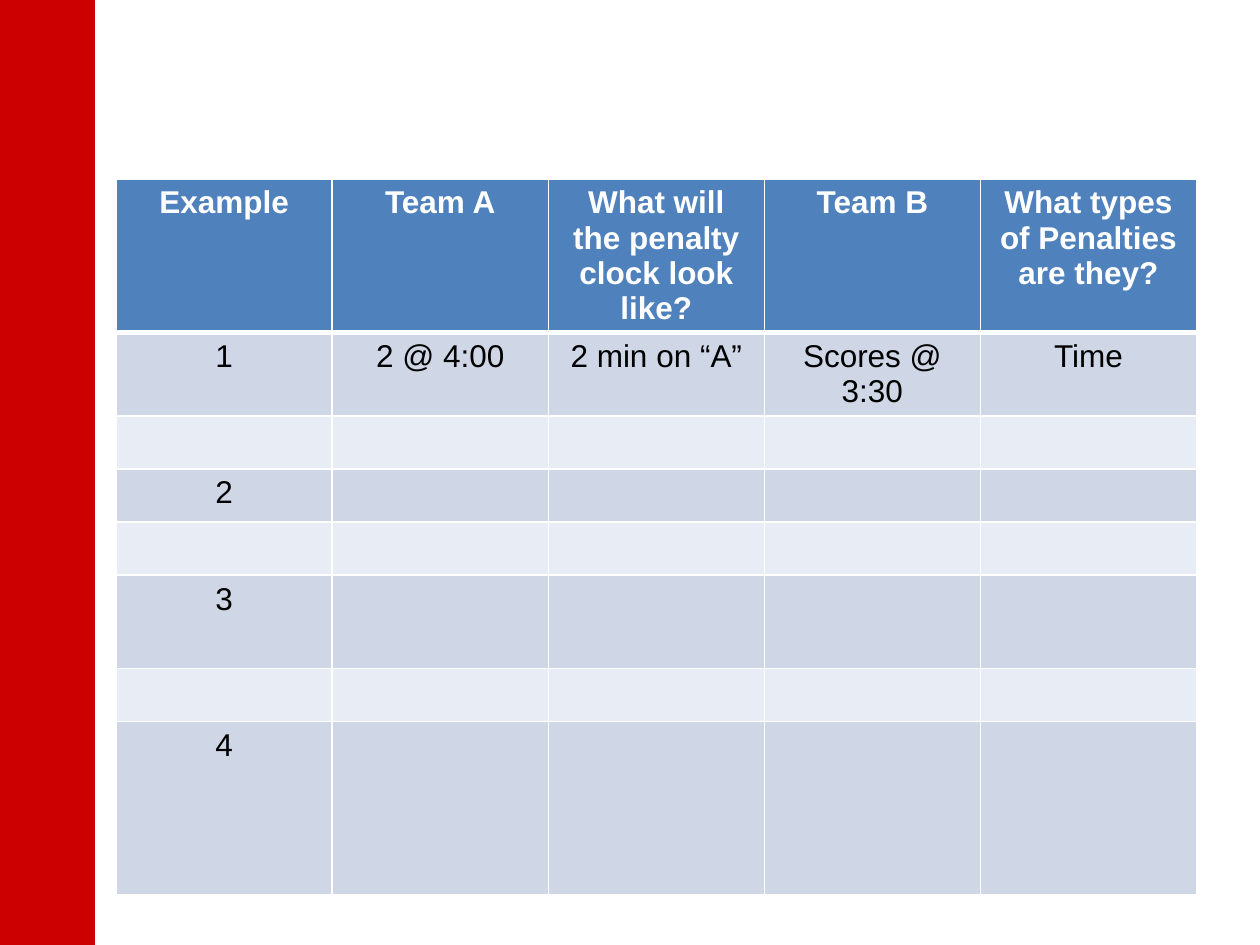
from dataclasses import dataclass

from pptx import Presentation
from pptx.dml.color import RGBColor as Rgb
from pptx.enum.shapes import MSO_SHAPE as Shape
from pptx.enum.text import PP_ALIGN as Align
from pptx.oxml import parse_xml
from pptx.oxml.ns import nsdecls
from pptx.util import Cm, Pt


@dataclass(frozen=True)
class Theme:
    font: str = "Arial"
    size: int = 18
    red: str = "CC0000"
    header: str = "4F81BD"
    bands: tuple = ("CFD7E7", "E8ECF4")
    white: str = "FFFFFF"
    black: str = "000000"
    rule: int = 1
    header_rule: int = 3


THEME = Theme()

HEADINGS = ["Example", "Team A", "What will the penalty clock look like?",
            "Team B", "What types of Penalties are they?"]
EXAMPLES = [["1", "2 @ 4:00", "2 min on “A”", "Scores @ 3:30", "Time"],
            [], ["2"], [], ["3"], [], ["4"]]
ROW_HEIGHTS = [2.46, 1.07, 1.07, 1.07, 1.07, 1.88, 1.07, 3.5]  # cm


def add_side_band(page, left, top, width, height):
    band = page.shapes.add_shape(Shape.RECTANGLE, left, top, width, height)
    band.shadow.inherit = False
    band.fill.solid()
    band.fill.fore_color.rgb = Rgb.from_string(THEME.red)
    band.line.color.rgb = Rgb.from_string(THEME.red)
    band.line.width = Pt(0.75)


def set_borders(cell, top, bottom):
    """Draw white rules round a cell; top and bottom are in points."""
    sides = {"L": THEME.rule, "R": THEME.rule, "T": top, "B": bottom}
    properties = cell._tc.get_or_add_tcPr()
    for side, points in sides.items():
        properties.append(parse_xml(
            f'<a:ln{side} {nsdecls("a")} w="{Pt(points)}"><a:solidFill>'
            f'<a:srgbClr val="{THEME.white}"/></a:solidFill></a:ln{side}>'))


def style_cell(cell, text, row):
    is_header = row == 0
    set_borders(cell,
                top=THEME.header_rule if row == 1 else THEME.rule,
                bottom=THEME.header_rule if is_header else THEME.rule)
    cell.fill.solid()
    cell.fill.fore_color.rgb = Rgb.from_string(
        THEME.header if is_header else THEME.bands[(row - 1) % 2])
    if text:
        cell.text = text
    para = cell.text_frame.paragraphs[0]
    para.alignment = Align.CENTER
    para.font.name = THEME.font
    para.font.size = Pt(THEME.size)
    para.font.bold = is_header
    para.font.color.rgb = Rgb.from_string(
        THEME.white if is_header else THEME.black)


def add_penalty_table(page, left, top, width):
    rows = [HEADINGS] + EXAMPLES
    columns = len(HEADINGS)
    table = page.shapes.add_table(len(rows), columns, left, top, width,
                                  Cm(sum(ROW_HEIGHTS))).table
    for row, (texts, height) in enumerate(zip(rows, ROW_HEIGHTS)):
        table.rows[row].height = Cm(height)
        for column in range(columns):
            text = texts[column] if column < len(texts) else ""
            style_cell(table.cell(row, column), text, row)


def main():
    deck = Presentation()
    deck.slide_width, deck.slide_height = Cm(25.4), Cm(19.05)
    page = deck.slides.add_slide(deck.slide_layouts[6])

    # Red band down the left edge
    add_side_band(page, 0, 0, Cm(1.9), deck.slide_height)
    # Penalty examples
    add_penalty_table(page, Cm(2.34), Cm(3.61), Cm(21.78))

    deck.save("out.pptx")


if __name__ == "__main__":
    main()
